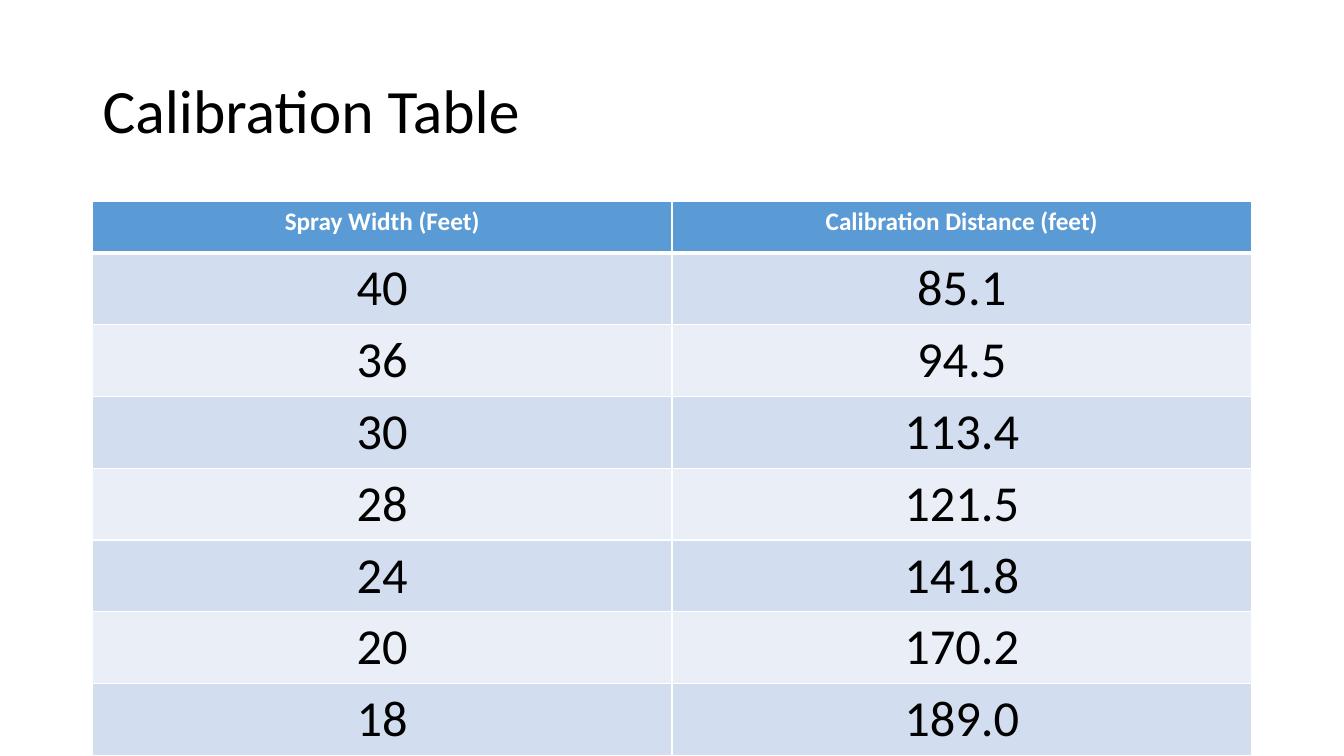
from lxml import etree
from pptx import Presentation
from pptx import util as u
from pptx.dml import color
from pptx.enum import text
from pptx.oxml import ns

READINGS = [
    ("40", "85.1"), ("36", "94.5"), ("30", "113.4"), ("28", "121.5"),
    ("24", "141.8"), ("20", "170.2"), ("18", "189.0"),
]
HEADINGS = ("Spray Width (Feet)", "Calibration Distance (feet)")
SPARE_ROWS = 2


def rgb(value):
    return color.RGBColor.from_string(value)


def write(frame, words, size=18, ink="000000", bold=False,
          align=text.PP_ALIGN.LEFT, spacing=1.0, font="Calibri"):
    para = frame.paragraphs[0]
    para.alignment = align
    para.line_spacing = spacing
    span = para.add_run()
    span.text = words
    span.font.name = font
    span.font.size = u.Pt(size)
    span.font.bold = bold
    span.font.color.rgb = rgb(ink)


def add_border(cell, side, width, ink):
    properties = cell._tc.get_or_add_tcPr()
    line = etree.SubElement(properties, ns.qn(f"a:ln{side}"), w=str(u.Pt(width)))
    fill = etree.SubElement(line, ns.qn("a:solidFill"))
    etree.SubElement(fill, ns.qn("a:srgbClr"), val=ink)


class SlideBuilder:
    header_fill = "5B9BD5"
    band_fills = ("D2DEEF", "EAEFF7")
    white = "FFFFFF"

    def __init__(self, deck):
        self.page = deck.slides.add_slide(deck.slide_layouts[5])
        self.page.background.fill.solid()
        self.page.background.fill.fore_color.rgb = rgb(self.white)

    def title(self, words, left, top, width, height):
        box = self.page.shapes.title
        box.left, box.top = u.Cm(left), u.Cm(top)
        box.width, box.height = u.Cm(width), u.Cm(height)
        frame = box.text_frame
        frame.word_wrap = True
        frame.auto_size = text.MSO_AUTO_SIZE.NONE
        frame.vertical_anchor = text.MSO_ANCHOR.MIDDLE
        write(frame, words, size=44, spacing=0.9)

    def table(self, rows, left, top, width, row_height):
        frame = self.page.shapes.add_table(
            len(rows), len(rows[0]), u.Cm(left), u.Cm(top),
            u.Cm(width), u.Cm(row_height * len(rows)))
        for row, values in enumerate(rows):
            for column, words in enumerate(values):
                self.cell(frame.table.cell(row, column), row, words)

    def cell(self, cell, row, words):
        # A thick rule separates the header from the readings
        is_header = row == 0
        widths = {"L": 1, "R": 1, "T": 3 if row == 1 else 1, "B": 3 if is_header else 1}
        for side, width in widths.items():
            add_border(cell, side, width, self.white)

        # The readings alternate between two bands
        cell.fill.solid()
        cell.fill.fore_color.rgb = rgb(
            self.header_fill if is_header else self.band_fills[(row - 1) % 2])
        if words:
            write(cell.text_frame, words, size=18 if is_header else 36,
                  ink=self.white if is_header else "000000",
                  bold=is_header, align=text.PP_ALIGN.CENTER)


def main():
    deck = Presentation()
    deck.slide_width, deck.slide_height = u.Cm(33.87), u.Cm(19.05)
    builder = SlideBuilder(deck)

    # Title
    builder.title("Calibration Table", 2.33, 1.01, 29.21, 3.68)

    # Calibration table
    rows = [HEADINGS, *READINGS] + [("", "")] * SPARE_ROWS
    builder.table(rows, left=2.33, top=5.07, width=29.21, row_height=1.3)

    deck.save("out.pptx")


if __name__ == "__main__":
    main()
